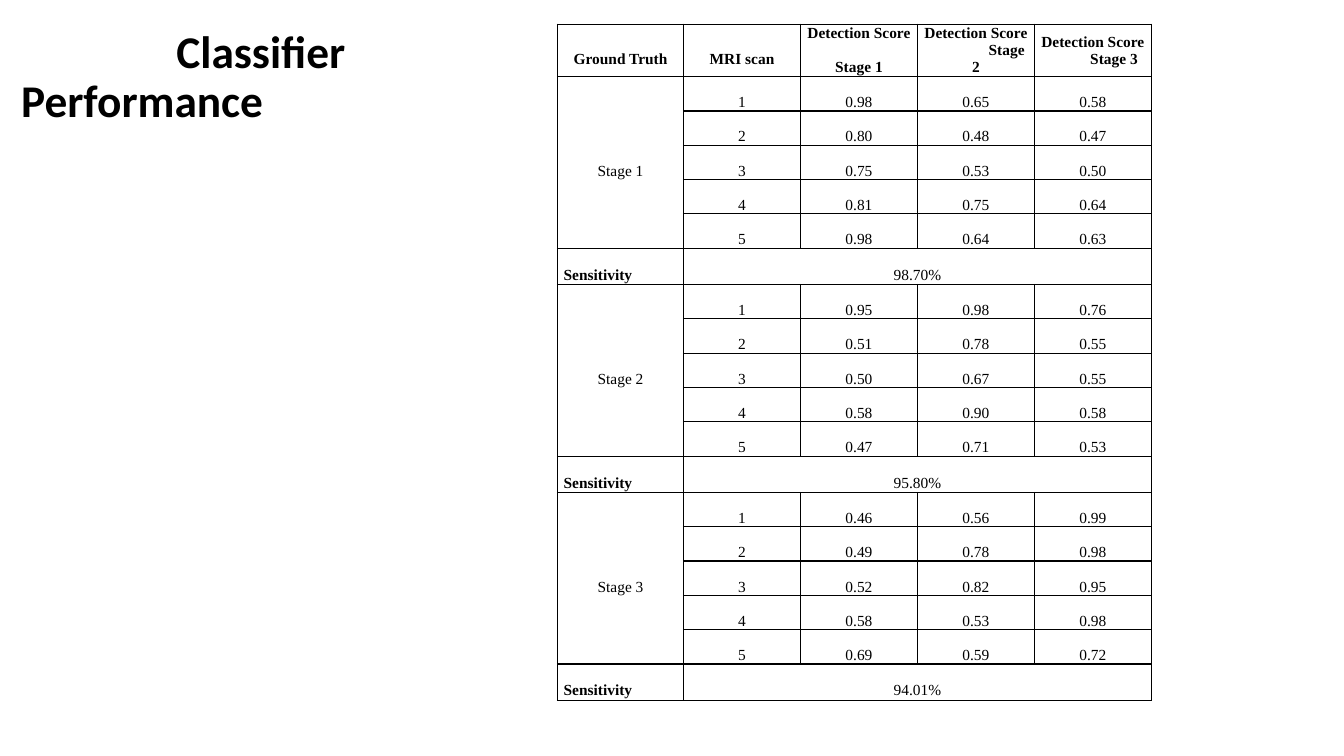
import pptx
import pptx.dml.color
import pptx.enum.text
import pptx.oxml
import pptx.oxml.ns
import pptx.util

Inches = pptx.util.Inches
Pt = pptx.util.Pt
ALIGN = pptx.enum.text.PP_ALIGN
MIDDLE = pptx.enum.text.MSO_ANCHOR.MIDDLE
COLORS = {"text": "000000", "border": "000000"}

# Header lines: text, left indent in inches, space before in points
HEADERS = [
    [("Detection Score", 0, 0), ("Stage 1", 0, 12)],
    [("Detection Score", 0, 0), ("Stage", 0.61, 0), ("2", 0, 0)],
    [("Detection Score", 0, 0), ("Stage 3", 0.42, 0)],
]
STAGES = [
    ("Stage 1", "98.70%", [(0.98, 0.65, 0.58), (0.80, 0.48, 0.47), (0.75, 0.53, 0.50),
                           (0.81, 0.75, 0.64), (0.98, 0.64, 0.63)]),
    ("Stage 2", "95.80%", [(0.95, 0.98, 0.76), (0.51, 0.78, 0.55), (0.50, 0.67, 0.55),
                           (0.58, 0.90, 0.58), (0.47, 0.71, 0.53)]),
    ("Stage 3", "94.01%", [(0.46, 0.56, 0.99), (0.49, 0.78, 0.98), (0.52, 0.82, 0.95),
                           (0.58, 0.53, 0.98), (0.69, 0.59, 0.72)]),
]


def format_font(font, name, size, bold):
    for attribute, value in {"name": name, "size": Pt(size), "bold": bold}.items():
        setattr(font, attribute, value)
    font.color.rgb = pptx.dml.color.RGBColor.from_string(COLORS["text"])


def write_cell(cell, lines, bold=False, align=ALIGN.CENTER, spacing=2.0):
    frame = cell.text_frame
    frame.text = "\n".join(text for text, indent, before in lines)
    for paragraph, (text, indent, before) in zip(frame.paragraphs, lines):
        layout = {"alignment": align, "line_spacing": spacing, "space_before": Pt(before)}
        for attribute, value in layout.items():
            setattr(paragraph, attribute, value)
        if indent:
            paragraph._p.get_or_add_pPr().set("marL", str(Inches(indent)))
        format_font(paragraph.runs[0].font, "Times New Roman", 11, bold)


presentation = pptx.Presentation()
presentation.slide_width = Inches(13.33)
presentation.slide_height = Inches(7.5)
slide = presentation.slides.add_slide(presentation.slide_layouts[5])

# Title with an indented first line
title = slide.shapes.title
title_box = {"left": -1.86, "top": 0.36, "width": 6.55, "height": 0.83}
for attribute, value in title_box.items():
    setattr(title, attribute, Inches(value))
title.text_frame.text = "Classifier Performance"
title.text_frame.word_wrap = True
title.text_frame.auto_size = pptx.enum.text.MSO_AUTO_SIZE.NONE
title.text_frame.vertical_anchor = MIDDLE
title_paragraph = title.text_frame.paragraphs[0]
title_paragraph.alignment = ALIGN.LEFT
title_paragraph.line_spacing = 0.9
title_properties = title_paragraph._p.get_or_add_pPr()
title_properties.set("marL", str(Inches(1.97)))
title_properties.set("indent", str(Inches(1.54)))
format_font(title_paragraph.runs[0].font, "Calibri", 32.4, True)

# Table grid
row_heights = [0.52] + ([0.34] * 5 + [0.36]) * len(STAGES)
column_widths = [1.25] + [1.16] * 4
table = slide.shapes.add_table(
    len(row_heights), len(column_widths), Inches(5.53), Inches(0.24),
    Inches(sum(column_widths)), Inches(sum(row_heights))).table
table.first_row = False
table.horz_banding = False
for row, height in zip(table.rows, row_heights):
    row.height = Inches(height)
for column, width in zip(table.columns, column_widths):
    column.width = Inches(width)

# Cell margins, borders and empty fill
cell_format = {"margin_left": Inches(0.06), "margin_right": Inches(0.06),
               "margin_top": 0, "margin_bottom": 0, "vertical_anchor": MIDDLE}
for cell in table.iter_cells():
    for attribute, value in cell_format.items():
        setattr(cell, attribute, value)
    # Small type keeps the unused cells of merged areas from stretching rows
    cell.text_frame.paragraphs[0].font.size = Pt(11)
    for side in ("lnL", "lnR", "lnT", "lnB"):
        cell._tc.get_or_add_tcPr().append(pptx.oxml.parse_xml(
            f'<a:{side} {pptx.oxml.ns.nsdecls("a")} w="{Pt(1)}"><a:solidFill>'
            f'<a:srgbClr val="{COLORS["border"]}"/></a:solidFill></a:{side}>'))
    cell.fill.background()

# Header row
for column, heading in enumerate(["Ground Truth", "MRI scan"]):
    write_cell(table.cell(0, column), [(heading, 0, 0)], bold=True)
for column, lines in enumerate(HEADERS, start=2):
    write_cell(table.cell(0, column), lines, bold=True, spacing=1.0)

# One block of scans and a sensitivity row per stage
for index, (stage, sensitivity, scans) in enumerate(STAGES):
    first = 1 + index * 6
    last = first + len(scans)
    table.cell(first, 0).merge(table.cell(last - 1, 0))
    table.cell(last, 1).merge(table.cell(last, 4))
    write_cell(table.cell(first, 0), [(stage, 0, 0)])
    for scan, scores in enumerate(scans):
        values = [str(scan + 1)] + [f"{score:.2f}" for score in scores]
        for column, value in enumerate(values, start=1):
            write_cell(table.cell(first + scan, column), [(value, 0, 0)])
    write_cell(table.cell(last, 0), [("Sensitivity", 0, 0)], bold=True, align=ALIGN.LEFT)
    write_cell(table.cell(last, 1), [(sensitivity, 0, 0)])

presentation.save("out.pptx")
